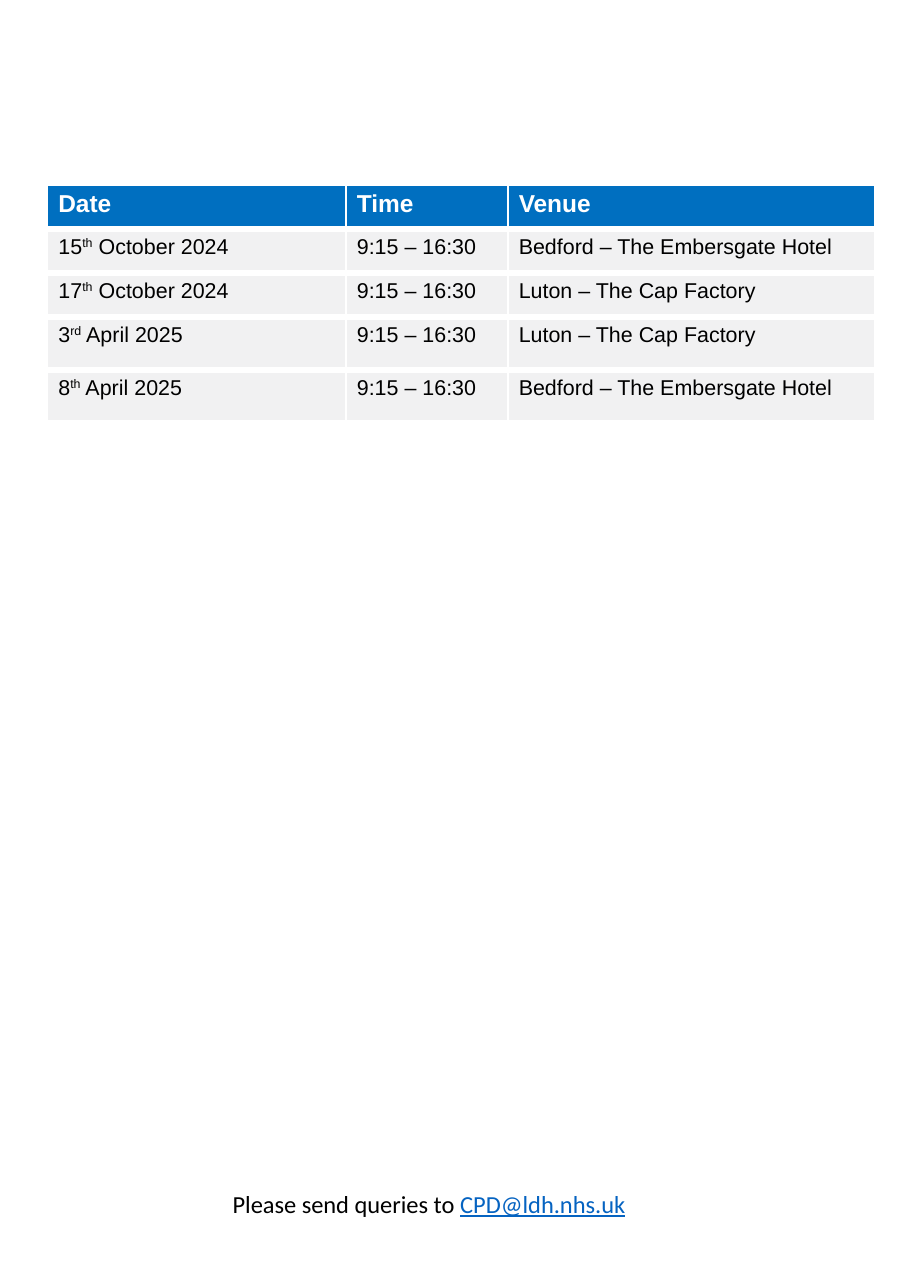
import pptx
import pptx.util
import pptx.dml.color
import pptx.enum.text
import pptx.oxml.ns
from lxml import etree
from pptx.util import Inches

COLORS = {"header": "006FC0", "row": "F1F1F2", "white": "FFFFFF",
          "black": "000000", "link": "0563C1"}


def add_run(paragraph, text, font, size, color):
    run = paragraph.add_run()
    run.text = text
    run.font.name = font
    run.font.size = pptx.util.Pt(size)
    run.font.color.rgb = pptx.dml.color.RGBColor.from_string(COLORS[color])
    return run


def add_border(cell, side, width):
    """Draw a white line on one side (L, R, T or B); call before filling the cell."""
    line = etree.SubElement(cell._tc.get_or_add_tcPr(), pptx.oxml.ns.qn(f"a:ln{side}"),
                            w=str(pptx.util.Pt(width)))
    fill = etree.SubElement(line, pptx.oxml.ns.qn("a:solidFill"))
    etree.SubElement(fill, pptx.oxml.ns.qn("a:srgbClr"), val=COLORS["white"])


prs = pptx.Presentation()
prs.slide_width = Inches(8.27)
prs.slide_height = Inches(11.69)
slide = prs.slides.add_slide(prs.slide_layouts[6])

# Each cell is a list of text pieces; the second piece of a date is superscript.
hours = ["9:15 – 16:30"]
bedford = ["Bedford – The Embersgate Hotel"]
luton = ["Luton – The Cap Factory"]
sessions = [
    [["Date"], ["Time"], ["Venue"]],
    [["15", "th", " October 2024"], hours, bedford],
    [["17", "th", " October 2024"], hours, luton],
    [["3", "rd", " April 2025"], hours, luton],
    [["8", "th", " April 2025"], hours, bedford],
]
column_widths = [2.71, 1.47, 3.33]
row_heights = [0.4, 0.4, 0.4, 0.48, 0.48]

schedule = slide.shapes.add_table(
    len(sessions), len(column_widths), Inches(0.43), Inches(1.68),
    Inches(sum(column_widths)), Inches(sum(row_heights))).table
for column, width in zip(schedule.columns, column_widths):
    column.width = Inches(width)
for row, height in zip(schedule.rows, row_heights):
    row.height = Inches(height)

for row_index, session in enumerate(sessions):
    is_header = row_index == 0
    for column_index, pieces in enumerate(session):
        cell = schedule.cell(row_index, column_index)
        cell.margin_left = Inches(0.1)
        cell.margin_top = Inches(0.05)
        cell.margin_right = cell.margin_bottom = 0
        add_border(cell, "L", 1.5)
        if column_index < len(column_widths) - 1:
            add_border(cell, "R", 1.5)
        add_border(cell, "T", 1.5 if is_header else 4.5)
        add_border(cell, "B", 4.5)
        cell.fill.solid()
        cell.fill.fore_color.rgb = pptx.dml.color.RGBColor.from_string(
            COLORS["header" if is_header else "row"])
        for piece_index, piece in enumerate(pieces):
            run = add_run(cell.text_frame.paragraphs[0], piece, "Arial",
                          16 if is_header else 14, "white" if is_header else "black")
            run.font.bold = is_header
            if piece_index == 1:
                run.font._element.set("baseline", "30000")

contact = slide.shapes.add_textbox(Inches(0.38), Inches(10.74), Inches(7.03), Inches(0.37))
contact.text_frame.word_wrap = True
contact_line = contact.text_frame.paragraphs[0]
contact_line.alignment = pptx.enum.text.PP_ALIGN.CENTER
add_run(contact_line, "Please send queries to ", "Calibri", 16, "black")
address = add_run(contact_line, "CPD@ldh.nhs.uk", "Calibri", 16, "link")
address.font.underline = True

prs.save("out.pptx")
